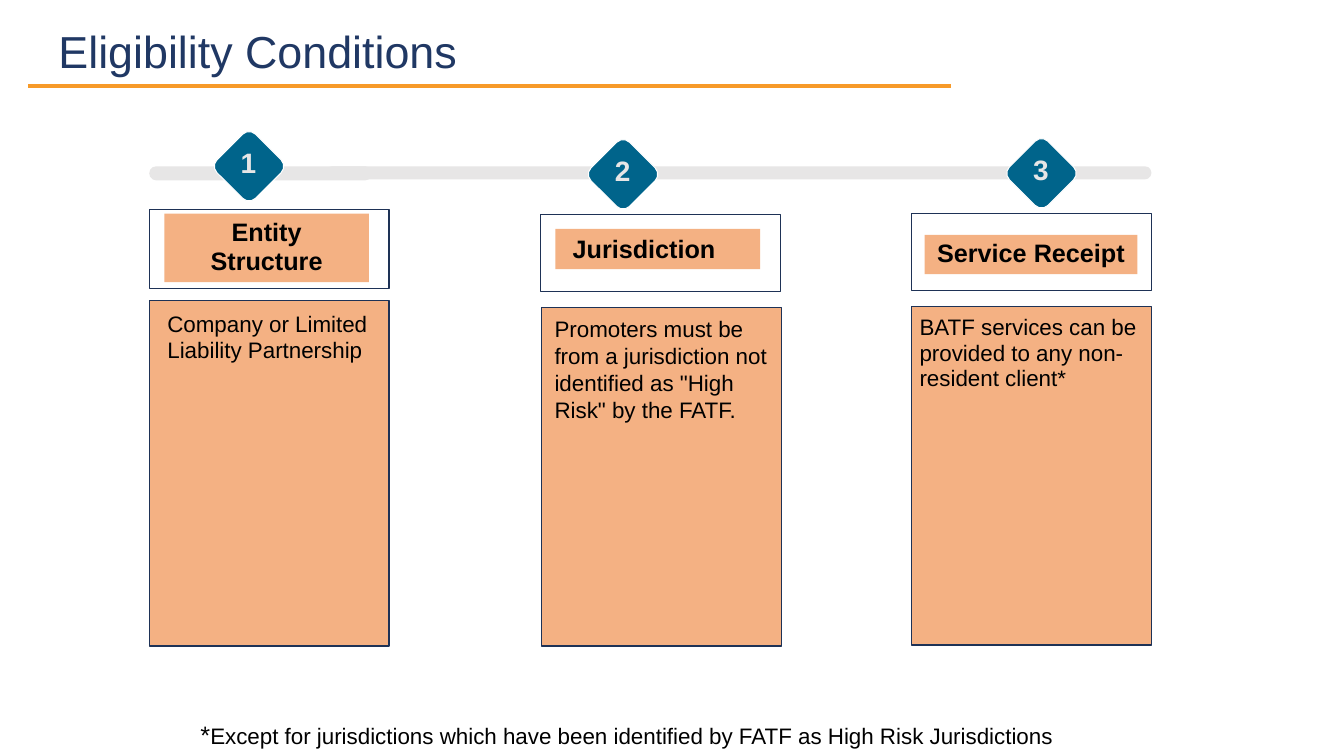
from dataclasses import dataclass

from lxml.etree import SubElement
from pptx import Presentation
from pptx.dml.color import RGBColor
from pptx.enum.shapes import MSO_CONNECTOR as Connector, MSO_SHAPE as Preset
from pptx.enum.text import MSO_ANCHOR as Anchor, PP_ALIGN as Align
from pptx.oxml.ns import qn
from pptx.util import Pt

SCALE = 9144


@dataclass(frozen=True)
class Theme:
    font: str = "Arial"
    title: str = "203864"
    rule: str = "F79A29"
    frame: str = "1E3256"
    panel: str = "F4B183"
    track: str = "E7E6E6"
    diamond: str = "00648B"
    white: str = "FFFFFF"
    ink: str = "000000"
    title_size: int = 32
    number_size: int = 20
    heading_size: int = 18
    body_size: int = 16


@dataclass(frozen=True)
class Box:
    left: int
    top: int
    width: int
    height: int

    def inner(self, left, top, width, height):
        return Box(self.left + left, self.top + top, width, height)

    def emu(self):
        return [px(n) for n in (self.left, self.top, self.width, self.height)]


@dataclass(frozen=True)
class Condition:
    number: str
    heading: str
    body: str
    column: Box
    frame: Box
    tag: Box
    panel: Box
    note: Box
    diamond: Box
    heading_style: dict
    body_style: dict


THEME = Theme()
TIGHT = dict(align=Align.CENTER, spacing=0.95, after=6)
LOOSE = dict(spacing=0.95, after=8)

CONDITIONS = [
    Condition("1", "Entity Structure", "Company or Limited Liability Partnership",
              Box(148, 138, 238, 503), Box(0, 70, 238, 78), Box(15, 74, 203, 68),
              Box(0, 160, 238, 343), Box(10, 164, 218, 369), Box(72, 0, 54, 54), TIGHT, LOOSE),
    Condition("2", "Jurisdiction",
              'Promoters must be from a jurisdiction not identified as "High Risk" by the FATF.',
              Box(536, 146, 238, 495), Box(0, 67, 238, 76), Box(15, 81, 203, 40),
              Box(1, 159, 238, 336), Box(6, 159, 231, 336), Box(55, 0, 54, 54),
              dict(insets=(17, 5, 10, 5)), {}),
    Condition("3", "Service Receipt", "BATF services can be provided to any non-resident client*",
              Box(904, 145, 238, 495), Box(0, 67, 238, 76), Box(13, 88, 211, 39),
              Box(0, 159, 238, 336), Box(0, 160, 238, 369), Box(102, 0, 54, 54), TIGHT, LOOSE),
]


def px(length):
    return length * SCALE


def rgb(code):
    return RGBColor.from_string(code)


def add_span(para, text, size, color, bold=False):
    span = para.add_run()
    span.text = text
    span.font.name = THEME.font
    span.font.size = Pt(size)
    span.font.bold = bold
    span.font.color.rgb = rgb(color)


def write_text(shape, text, size=THEME.body_size, color=THEME.ink, bold=False, align=Align.LEFT,
               anchor=Anchor.TOP, spacing=None, after=0, insets=(10, 5, 10, 5)):
    frame = shape.text_frame
    frame.word_wrap = True
    frame.vertical_anchor = anchor
    frame.margin_left, frame.margin_top, frame.margin_right, frame.margin_bottom = map(px, insets)
    para = frame.paragraphs[0]
    para.alignment = align
    para.line_spacing = spacing
    para.space_after = Pt(after)
    add_span(para, text, size, color, bold)
    return para


def add_block(shapes, box, preset=Preset.RECTANGLE, fill=THEME.white, line=None, weight=1):
    shape = shapes.add_shape(preset, *box.emu())
    shape.shadow.inherit = False
    shape.fill.solid()
    shape.fill.fore_color.rgb = rgb(fill)
    if line:
        shape.line.color.rgb = rgb(line)
        shape.line.width = Pt(weight)
    else:
        shape.line.fill.background()
    return shape


def add_title(page, box):
    write_text(page.shapes.add_textbox(*box.emu()), "Eligibility Conditions", size=THEME.title_size,
               color=THEME.title, anchor=Anchor.MIDDLE, insets=(13, 13, 13, 13))
    left, right, level = px(box.left - 17), px(box.left + 898), px(box.top + 75)
    rule = page.shapes.add_connector(Connector.STRAIGHT, left, level, right, level)
    rule.line.color.rgb = rgb(THEME.rule)
    rule.line.width = Pt(3)
    SubElement(rule._element.spPr, qn("a:effectLst"))


def add_track(page, box):
    for part in (box.inner(0, 0, 221, 14), box.inner(175, 0, box.width - 175, 13)):
        bar = add_block(page.shapes, part, Preset.ROUNDED_RECTANGLE, THEME.track)
        bar.adjustments[0] = 0.5


def add_diamond(page, box, number):
    group = page.shapes.add_group_shape()
    diamond = add_block(group.shapes, box, Preset.ROUNDED_RECTANGLE, THEME.diamond, THEME.white, 0.75)
    diamond.rotation = 45
    label = group.shapes.add_textbox(*box.inner(-7, 4, 67, 42).emu())
    write_text(label, number, size=THEME.number_size, color=THEME.track, bold=True, **TIGHT)


def add_condition(page, item):
    def place(part):
        return item.column.inner(part.left, part.top, part.width, part.height)

    add_block(page.shapes, place(item.frame), line=THEME.frame)
    add_block(page.shapes, place(item.panel), fill=THEME.panel, line=THEME.frame)
    note = page.shapes.add_textbox(*place(item.note).emu())
    write_text(note, item.body, **{"insets": (8, 8, 8, 8), **item.body_style})
    tag = add_block(page.shapes, place(item.tag), fill=THEME.panel)
    write_text(tag, item.heading, size=THEME.heading_size, bold=True, **item.heading_style)
    add_diamond(page, place(item.diamond), item.number)


def add_footnote(page, box):
    para = write_text(page.shapes.add_textbox(*box.emu()), "*", size=THEME.heading_size)
    add_span(para, "Except for jurisdictions which have been identified by FATF as High Risk Jurisdictions",
             THEME.body_size, THEME.ink)


def main():
    deck = Presentation()
    deck.slide_width, deck.slide_height = px(1333), px(750)
    page = deck.slides.add_slide(deck.slide_layouts[6])
    add_title(page, Box(45, 10, 1242, 81))
    add_track(page, Box(148, 165, 994, 14))
    for item in CONDITIONS:
        add_condition(page, item)
    add_footnote(page, Box(189, 709, 1064, 40))
    deck.save("out.pptx")


if __name__ == "__main__":
    main()
